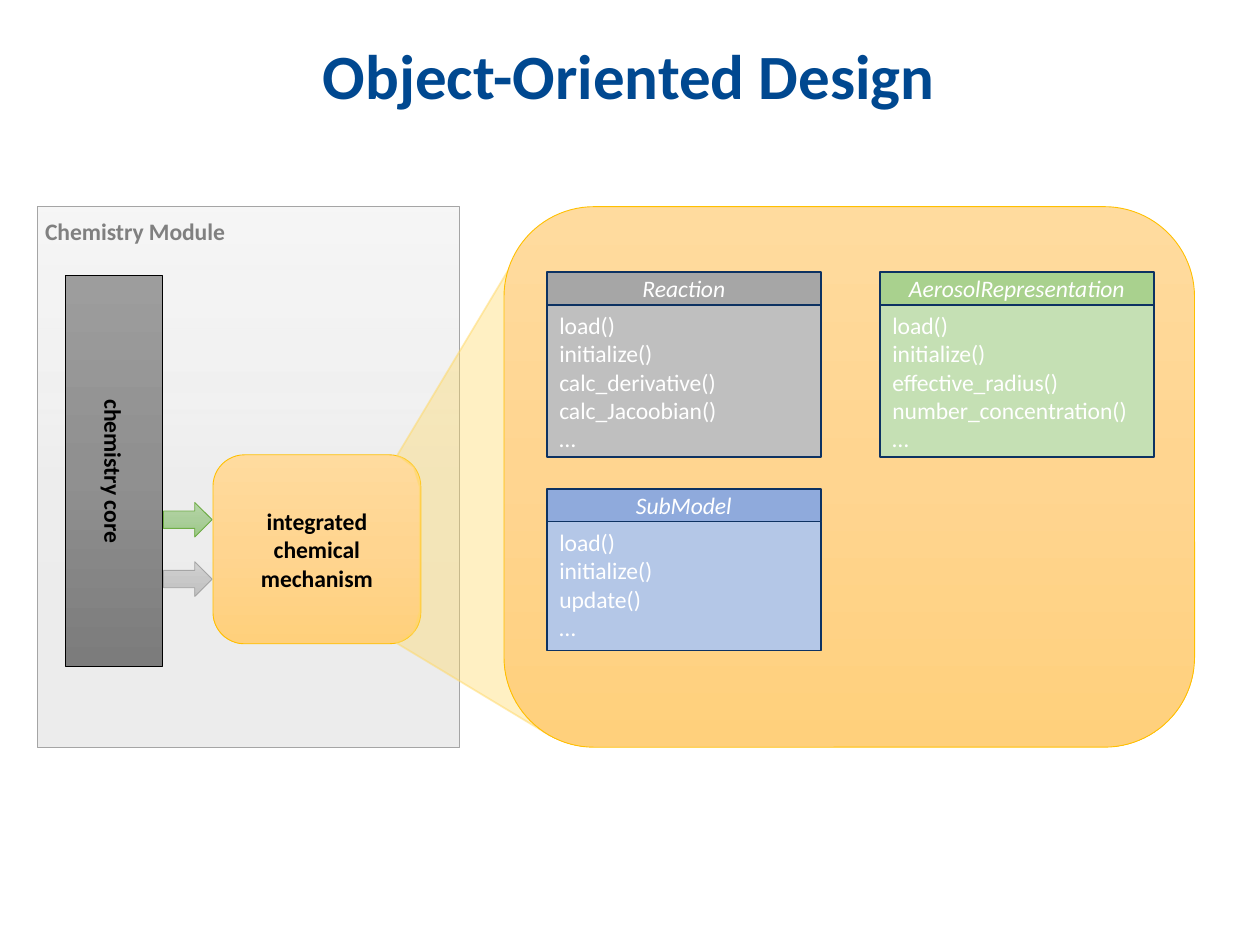
from dataclasses import dataclass

from pptx import Presentation
from pptx.dml.color import RGBColor
from pptx.enum import shapes, text
from pptx.oxml import parse_xml
from pptx.oxml.ns import nsdecls
from pptx.util import Pt


@dataclass(frozen=True)
class Theme:
    font: str = "Calibri"
    title_size: float = 36
    body_size: float = 13.5
    title: str = "004890"
    heading: str = "808080"
    black: str = "000000"
    white: str = "FFFFFF"
    navy: str = "0D3262"
    gold: str = "FFC000"
    funnel: str = "FFD966"
    green: str = "70AD47"
    grey: str = "A5A5A5"
    # Gradients run from top to bottom: (colour, opacity in percent)
    panel_fade: tuple = (("D2D2D2", 20), ("C8C8C8", 30), ("C0C0C0", 30))
    grey_fade: tuple = (("D2D2D2", 100), ("C8C8C8", 100), ("C0C0C0", 100))
    core_fade: tuple = (("9D9D9D", 100), ("909090", 100), ("7C7C7C", 100))
    gold_fade: tuple = (("FFDB9E", 100), ("FFD590", 100), ("FFD07C", 100))
    green_fade: tuple = (("B5D5A7", 100), ("AACE9A", 100), ("9CC987", 100))


theme = Theme()
RECTANGLE = shapes.MSO_SHAPE.RECTANGLE
ROUNDED = shapes.MSO_SHAPE.ROUNDED_RECTANGLE
ARROW = shapes.MSO_SHAPE.RIGHT_ARROW
LEFT, CENTER = text.PP_ALIGN.LEFT, text.PP_ALIGN.CENTER
TOP, MIDDLE = text.MSO_ANCHOR.TOP, text.MSO_ANCHOR.MIDDLE

presentation = Presentation()
presentation.slide_width, presentation.slide_height = Pt(720), Pt(540)
slide = presentation.slides.add_slide(presentation.slide_layouts[6])


def add_box(kind, left, top, width, height, fill, line, line_width=0.5):
    """Add a preset shape; fill is one colour or a three-stop gradient."""
    shape = slide.shapes.add_shape(kind, Pt(left), Pt(top), Pt(width), Pt(height))
    if isinstance(fill, str):
        shape.fill.solid()
        shape.fill.fore_color.rgb = RGBColor.from_string(fill)
    else:
        stops = "".join(
            f'<a:gs pos="{index * 50000}"><a:srgbClr val="{color}">'
            f'<a:alpha val="{opacity * 1000}"/></a:srgbClr></a:gs>'
            for index, (color, opacity) in enumerate(fill))
        shape._element.spPr.append(parse_xml(
            f'<a:gradFill {nsdecls("a")} rotWithShape="1"><a:gsLst>{stops}</a:gsLst>'
            '<a:lin ang="5400000" scaled="0"/></a:gradFill>'))
    shape.line.color.rgb = RGBColor.from_string(line)
    shape.line.width = Pt(line_width)
    shape.shadow.inherit = False
    return shape


def write(shape, lines, color, size=theme.body_size, align=CENTER, anchor=MIDDLE,
          bold=False, italic=False):
    """Write one paragraph per line into a shape."""
    frame = shape.text_frame
    frame.word_wrap = True
    frame.vertical_anchor = anchor
    for index, line in enumerate(lines):
        paragraph = frame.add_paragraph() if index else frame.paragraphs[0]
        paragraph.alignment = align
        run = paragraph.add_run()
        run.text = line
        run.font.name, run.font.size = theme.font, Pt(size)
        run.font.bold, run.font.italic = bold, italic
        run.font.color.rgb = RGBColor.from_string(color)


# Title
title = slide.shapes.add_textbox(Pt(27.4), Pt(12.2), Pt(663.8), Pt(66.2))
write(title, ["Object-Oriented Design"], theme.title, theme.title_size, bold=True)
title.text_frame.paragraphs[0].line_spacing = 0.9

# Chemistry module panel
add_box(RECTANGLE, 21.6, 118.1, 241.2, 308.9, theme.panel_fade, theme.grey)
heading = slide.shapes.add_textbox(Pt(18.7), Pt(120.2), Pt(141.8), Pt(23.8))
write(heading, ["Chemistry Module"], theme.heading, align=LEFT, anchor=TOP, bold=True)

core = add_box(RECTANGLE, 37.4, 157.7, 55.4, 223.2, theme.core_fade, theme.black)
write(core, ["chemistry core"], theme.black, bold=True)
core.text_frame._txBody.bodyPr.set("vert", "vert")

mechanism = add_box(ROUNDED, 121.7, 259.9, 118.8, 108, theme.gold_fade, theme.gold)
write(mechanism, ["integrated", "chemical", "mechanism"], theme.black, bold=True)

# Arrows from the core to the mechanism
for top, fade, line in ((287.1, theme.green_fade, theme.green),
                        (321, theme.grey_fade, theme.grey)):
    add_box(ARROW, 93.4, top, 27.8, 19.8, fade, line)

# Translucent funnel that follows the mechanism's right edge
outline = [(301, 136.8), (436.3, 218.2), (314.6, 420.5), (226.1, 367.2),
           (229, 366.5), (236.5, 361), (239.8, 349.9), (239.8, 277.9),
           (236.5, 267), (229, 261.4), (226.8, 260.6)]
points = [(Pt(x), Pt(y)) for x, y in outline]
builder = slide.shapes.build_freeform(*points[0], scale=1.0)
builder.add_line_segments(points[1:], close=True)
funnel = builder.convert_to_shape()
funnel.fill.solid()
funnel.line.width = Pt(1)
funnel.line.fill.solid()
for paint, opacity in ((funnel.fill, 39), (funnel.line.fill, 50)):
    paint.fore_color.rgb = RGBColor.from_string(theme.funnel)
for color, opacity in zip(funnel._element.spPr.xpath(".//a:srgbClr"), (39, 50)):
    color.append(parse_xml(f'<a:alpha {nsdecls("a")} val="{opacity * 1000}"/>'))
funnel.shadow.inherit = False

# Enlarged mechanism with its classes
add_box(ROUNDED, 288, 118.1, 394.6, 308.9, theme.gold_fade, theme.gold)

class_width, header_height = 156.5, 18.7
classes = [
    ("SubModel", 312.5, 279.4, 73.7, "8FAADC", "B4C7E7",
     ["load()", "initialize()", "update()", "…"]),
    ("AerosolRepresentation", 502.8, 155.5, 87.1, "A9D18E", "C5E0B4",
     ["load()", "initialize()", "effective_radius()", "number_concentration()", "…"]),
    ("Reaction", 312.5, 155.5, 87.1, "A6A6A6", "BFBFBF",
     ["load()", "initialize()", "calc_derivative()", "calc_Jacoobian()", "…"]),
]
for name, left, top, body_height, header_fill, body_fill, methods in classes:
    header = add_box(RECTANGLE, left, top, class_width, header_height,
                     header_fill, theme.navy, 1)
    write(header, [name], theme.white, italic=True)
    body = add_box(RECTANGLE, left, top + header_height, class_width, body_height,
                   body_fill, theme.navy, 1)
    write(body, methods, theme.white, align=LEFT, anchor=TOP)

presentation.save("out.pptx")
